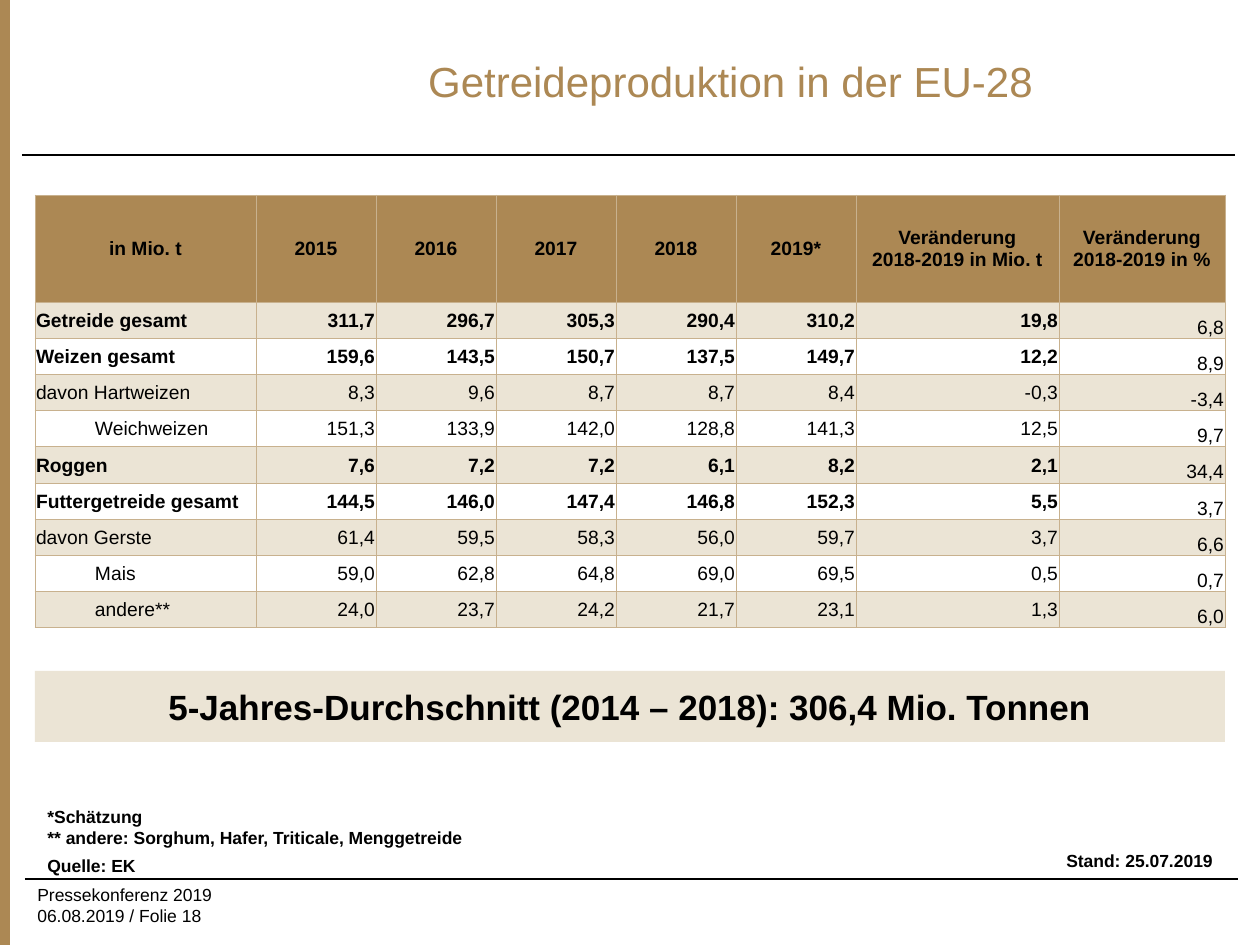
import pptx
import pptx.util
import pptx.dml.color
import pptx.enum.shapes
import pptx.enum.text
import pptx.oxml
import pptx.oxml.ns

RGBColor = pptx.dml.color.RGBColor
PP_ALIGN = pptx.enum.text.PP_ALIGN
MSO_ANCHOR = pptx.enum.text.MSO_ANCHOR
MSO_SHAPE = pptx.enum.shapes.MSO_SHAPE

PX = 914400 // 126
GOLD = RGBColor(0xAC, 0x88, 0x54)
CREAM = RGBColor(0xEB, 0xE4, 0xD5)
BORDER = RGBColor(0xC8, 0xB1, 0x8E)
WHITE = RGBColor(0xFF, 0xFF, 0xFF)
BLACK = RGBColor(0, 0, 0)

HEADERS = ["in Mio. t", "2015", "2016", "2017", "2018", "2019*",
           "Veränderung\v2018-2019 in Mio. t", "Veränderung\v2018-2019 in %"]
ROWS = [
    ("Getreide gesamt", "311,7 296,7 305,3 290,4 310,2 19,8 6,8"),
    ("Weizen gesamt", "159,6 143,5 150,7 137,5 149,7 12,2 8,9"),
    ("davon Hartweizen", "8,3 9,6 8,7 8,7 8,4 -0,3 -3,4"),
    ("Weichweizen", "151,3 133,9 142,0 128,8 141,3 12,5 9,7"),
    ("Roggen", "7,6 7,2 7,2 6,1 8,2 2,1 34,4"),
    ("Futtergetreide gesamt", "144,5 146,0 147,4 146,8 152,3 5,5 3,7"),
    ("davon Gerste", "61,4 59,5 58,3 56,0 59,7 3,7 6,6"),
    ("Mais", "59,0 62,8 64,8 69,0 69,5 0,5 0,7"),
    ("andere**", "24,0 23,7 24,2 21,7 23,1 1,3 6,0"),
]
TOTALS = {"Getreide gesamt", "Weizen gesamt", "Roggen", "Futtergetreide gesamt"}
INDENTED = {"Weichweizen", "Mais", "andere**"}
COLUMNS = [221] + [120] * 5 + [203, 166]
HEADER_HEIGHT = 107


def emu(*lengths):
    return [n * PX for n in lengths]


def write(tf, text, size, bold=False, color=BLACK, align=PP_ALIGN.LEFT):
    tf.text = text
    for p in tf.paragraphs:
        p.alignment = align
        p.font.name = "Arial"
        p.font.size = pptx.util.Pt(size)
        p.font.bold = bold
        p.font.color.rgb = color


def add_box(s, x, y, w, h, fill):
    sp = s.shapes.add_shape(MSO_SHAPE.RECTANGLE, *emu(x, y, w, h))
    sp.shadow.inherit = False
    sp.fill.solid()
    sp.fill.fore_color.rgb = fill
    sp.line.fill.background()
    return sp


def add_rule(s, x, y, w):
    line = s.shapes.add_connector(pptx.enum.shapes.MSO_CONNECTOR.STRAIGHT,
                                  *emu(x, y, x + w, y))
    line.line.color.rgb = BLACK
    line.line.width = pptx.util.Pt(0.75)
    pptx.oxml.ns.qn("a:effectLst")
    line._element.spPr.append(pptx.oxml.parse_xml(
        "<a:effectLst %s/>" % pptx.oxml.ns.nsdecls("a")))


def add_note(s, x, y, w, h, text, bold=True, align=PP_ALIGN.LEFT):
    tf = s.shapes.add_textbox(*emu(x, y, w, h)).text_frame
    tf.word_wrap = True
    write(tf, text, 10, bold, align=align)


def add_title(s, x, y, w, h):
    title = s.shapes.title
    title.left, title.top, title.width, title.height = emu(x, y, w, h)
    tf = title.text_frame
    tf.vertical_anchor = MSO_ANCHOR.MIDDLE
    write(tf, "Getreideproduktion in der EU-28", 24, color=GOLD, align=PP_ALIGN.CENTER)


def set_borders(cell):
    tcPr = cell._tc.get_or_add_tcPr()
    for i, side in enumerate(("lnL", "lnR", "lnT", "lnB")):
        tcPr.insert(i, pptx.oxml.parse_xml(
            f'<a:{side} {pptx.oxml.ns.nsdecls("a")} w="6350"><a:solidFill>'
            f'<a:srgbClr val="{BORDER}"/></a:solidFill></a:{side}>'))


def fill_cell(cell, text, fill, bold, align, anchor=MSO_ANCHOR.MIDDLE, indent=1):
    cell.margin_left, cell.margin_right, cell.margin_top, cell.margin_bottom = emu(
        indent, 1, 1, 0)
    cell.vertical_anchor = anchor
    cell.fill.solid()
    cell.fill.fore_color.rgb = fill
    set_borders(cell)
    write(cell.text_frame, text, 11, bold, align=align)


def add_harvest_table(s, x, y, w, h):
    table = s.shapes.add_table(len(ROWS) + 1, len(COLUMNS), *emu(x, y, w, h)).table
    for column, width in zip(table.columns, COLUMNS):
        column.width = width * PX
    for row in table.rows:
        row.height = (h - HEADER_HEIGHT) * PX // len(ROWS)
    table.rows[0].height = HEADER_HEIGHT * PX
    for c, text in enumerate(HEADERS):
        fill_cell(table.cell(0, c), text, GOLD, True, PP_ALIGN.CENTER)
    for r, (label, values) in enumerate(ROWS, 1):
        fill = CREAM if r % 2 else WHITE
        bold = label in TOTALS
        fill_cell(table.cell(r, 0), label, fill, bold, PP_ALIGN.LEFT,
                  indent=60 if label in INDENTED else 1)
        *amounts, percent = values.split()
        for c, value in enumerate(amounts, 1):
            fill_cell(table.cell(r, c), value, fill, bold, PP_ALIGN.RIGHT)
        fill_cell(table.cell(r, len(COLUMNS) - 1), percent, fill, False,
                  PP_ALIGN.RIGHT, MSO_ANCHOR.BOTTOM)


def add_average(s, x, y, w, h):
    tf = add_box(s, x, y, w, h, CREAM).text_frame
    tf.word_wrap = False
    tf.vertical_anchor = MSO_ANCHOR.MIDDLE
    write(tf, "5-Jahres-Durchschnitt (2014 – 2018): 306,4 Mio. Tonnen", 20, True,
          align=PP_ALIGN.CENTER)


def add_notes(s, x, y, w, h):
    add_note(s, x, y, w, 59,
             "*Schätzung\n** andere: Sorghum, Hafer, Triticale, Menggetreide")
    add_note(s, x, y + h - 30, w, 30, "Quelle: EK")
    add_note(s, x, y + h - 35, w, 35, "Stand: 25.07.2019", align=PP_ALIGN.RIGHT)


def add_footer(s, x, y, w, h):
    add_rule(s, x, y, w)
    add_note(s, x, y - 1, 417, h, "Pressekonferenz 2019\v06.08.2019 / Folie 18", False)


def main():
    prs = pptx.Presentation()
    prs.slide_width, prs.slide_height = emu(1260, 945)
    s = prs.slides.add_slide(prs.slide_layouts[5])
    add_box(s, -1, 0, 11, 945, GOLD)
    add_rule(s, 22, 155, 1213)
    add_title(s, 233, 16, 995, 129)
    add_harvest_table(s, 35, 195, 1190, 433)
    add_average(s, 35, 671, 1190, 71)
    add_notes(s, 35, 800, 1190, 79)
    add_footer(s, 25, 879, 1213, 50)
    prs.save("out.pptx")


if __name__ == "__main__":
    main()
